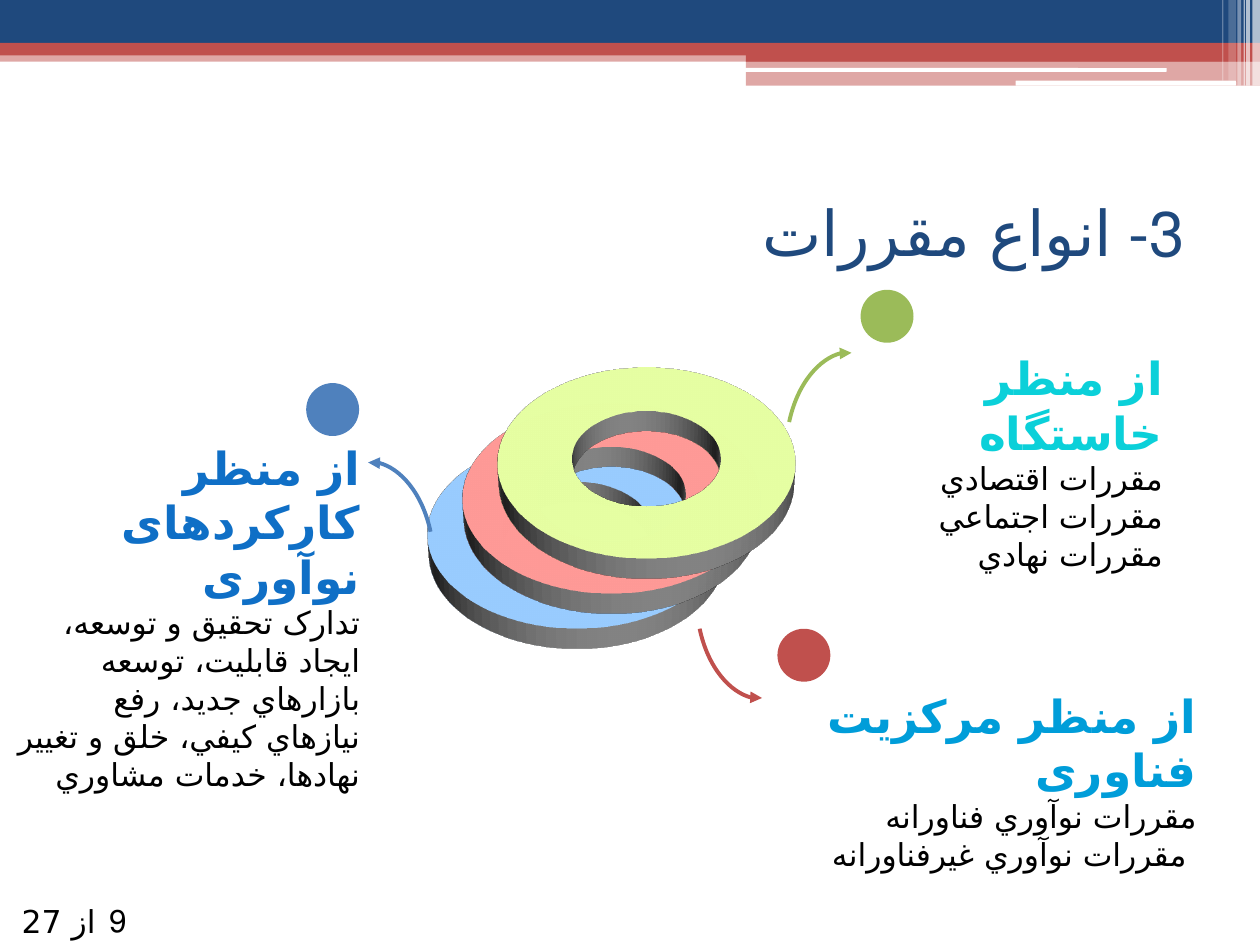
from lxml import etree
from pptx import Presentation
from pptx.dml.color import RGBColor
from pptx.enum.shapes import MSO_CONNECTOR, MSO_SHAPE
from pptx.enum.text import MSO_ANCHOR, MSO_AUTO_SIZE, PP_ALIGN
from pptx.oxml import parse_xml
from pptx.oxml.ns import nsdecls, qn
from pptx.util import Inches, Pt

RECT, ROUND = MSO_SHAPE.RECTANGLE, MSO_SHAPE.ROUNDED_RECTANGLE
DONUT, OVAL = MSO_SHAPE.DONUT, MSO_SHAPE.OVAL
CURVE = MSO_CONNECTOR.CURVE
RIGHT, CENTER = PP_ALIGN.RIGHT, PP_ALIGN.CENTER
TOP, MIDDLE, BOTTOM = MSO_ANCHOR.TOP, MSO_ANCHOR.MIDDLE, MSO_ANCHOR.BOTTOM
GROW = MSO_AUTO_SIZE.SHAPE_TO_FIT_TEXT

WHITE = RGBColor(0xFF, 0xFF, 0xFF)
BLACK = RGBColor(0, 0, 0)
NAVY = RGBColor(0x1F, 0x49, 0x7D)
BLUE = RGBColor(0x4F, 0x81, 0xBD)
RED = RGBColor(0xC0, 0x50, 0x4D)
GREEN = RGBColor(0x9B, 0xBB, 0x59)
TEAL = RGBColor(0x0B, 0xD0, 0xD9)
SKY = RGBColor(0x00, 0x9D, 0xD9)
AZURE = RGBColor(0x0F, 0x6F, 0xC6)

HEAD = {"size": Pt(26), "name": "Calibri", "bold": True}
BODY = {"size": Pt(18), "name": "Cambria", "bold": False}
TITLE = {"size": Pt(36), "name": "Roboto"}
SCRIPT = "DejaVu Sans"  # face for the Persian letters

# Tilted view and depth of the rings
SCENE = (
    f'<a:scene3d {nsdecls("a")}><a:camera prst="perspectiveRelaxed"/>'
    '<a:lightRig rig="threePt" dir="t"/></a:scene3d>'
)
DEPTH = (
    f'<a:sp3d {nsdecls("a")} extrusionH="190500" prstMaterial="plastic">'
    '<a:extrusionClr><a:srgbClr val="FFFFFF"/></a:extrusionClr></a:sp3d>'
)


class Page:
    def __init__(self, slide):
        self.shapes = slide.shapes

    def shape(self, kind, box, color, alpha=100):
        item = self.shapes.add_shape(kind, *map(Inches, box))
        item.shadow.inherit = False
        item.fill.solid()
        item.fill.fore_color.rgb = color
        item.line.fill.background()
        if alpha < 100:
            tint = item.element.spPr.find(".//" + qn("a:srgbClr"))
            etree.SubElement(tint, qn("a:alpha"), val=str(alpha * 1000))
        return item

    def ring(self, left, top, color):
        item = self.shape(DONUT, (left, top, 2.36, 2.36), color)
        item.line.color.rgb = WHITE
        item.line.width = Pt(1.5)
        for xml in (SCENE, DEPTH):
            item.element.spPr.append(parse_xml(xml))

    def arrow(self, left, top, turn, color, flip=False):
        """Curved arrow, mirrored across, then turned by whole degrees."""
        wide, high = 0.64, 0.37
        y1, y2 = (top + high, top) if flip else (top, top + high)
        item = self.shapes.add_connector(
            CURVE, *map(Inches, (left + wide, y1, left, y2)))
        item.line.color.rgb = color
        item.line.width = Pt(2.25)
        props = item.element.spPr
        props.find(qn("a:xfrm")).set("rot", str(turn * 60000))
        props.find(qn("a:prstGeom")).set("prst", "curvedConnector2")
        etree.SubElement(props.find(qn("a:ln")), qn("a:tailEnd"),
                         type="triangle")
        etree.SubElement(props, qn("a:effectLst"))

    def text(self, box, lines, align=RIGHT, anchor=TOP, inset=True):
        """Right-to-left text; each line is (parts, format, colour)."""
        frame = self.shapes.add_textbox(*map(Inches, box)).text_frame
        frame.word_wrap = True
        frame.vertical_anchor = anchor
        if not inset:
            frame.auto_size = GROW
            for side in ("left", "top", "right", "bottom"):
                setattr(frame, f"margin_{side}", 0)
        for i, (parts, form, color) in enumerate(lines):
            para = frame.add_paragraph() if i else frame.paragraphs[0]
            para.alignment = align
            for part in parts:
                self.run(para, part, form, color)
        for props in self.shapes[-1].element.iter(qn("a:pPr")):
            props.set("rtl", "1")

    def run(self, para, words, form, color):
        run = para.add_run()
        run.text = words
        for key, value in form.items():
            setattr(run.font, key, value)
        run.font.color.rgb = color
        # Digits keep the default face
        if not any(c.isdigit() for c in words):
            props = para.runs[-1].font.fill and para.runs[-1]
            latin = list(para.runs[-1].font and self.shapes[-1].element.iter(
                qn("a:latin")))[-1]
            latin.addnext(latin.makeelement(qn("a:cs"), typeface=SCRIPT))

    def block(self, box, head, color, *body):
        lines = [([head], HEAD, color)] + [([b], BODY, BLACK) for b in body]
        self.text(box, lines, inset=False)


def main():
    deck = Presentation()
    deck.slide_width, deck.slide_height = Inches(10), Inches(7.5)
    page = Page(deck.slides.add_slide(deck.slide_layouts[6]))

    # Header bands
    for box, color, alpha in (
        ((0, 0.4, 10, 0.09), RED, 50),
        ((0, 0, 10, 0.34), NAVY, 100),
        ((0, 0.34, 10, 0.1), RED, 100),
        ((5.92, 0.39, 4.08, 0.1), RED, 100),
        ((5.92, 0.48, 4.08, 0.2), RED, 50),
    ):
        page.shape(RECT, box, color, alpha)
    for box in ((5.91, 0.54, 3.35, 0.03), (8.06, 0.64, 1.75, 0.04)):
        page.shape(ROUND, box, WHITE)

    # Pale stripes at the corner
    for left, wide, high, alpha in (
        (9.94, 0.06, 0.68, 65), (9.89, 0.03, 0.68, 65),
        (9.87, 0.01, 0.68, 60), (9.82, 0.03, 0.68, 40),
        (9.75, 0.06, 0.64, 20), (9.7, 0.01, 0.64, 30),
    ):
        page.shape(RECT, (left, 0, wide, high), WHITE, alpha)

    # Stacked rings
    for i, color in enumerate((BLUE, RED, GREEN)):
        page.ring(3.4 + 0.275 * i, 3.01 - 0.28 * i, color)

    # Text blocks
    page.block((6.5, 2.78, 2.73, 1.35), "از منظر خاستگاه", TEAL,
               "مقررات اقتصادي", "مقررات اجتماعي", "مقررات نهادي")
    page.block((6.17, 5.46, 3.33, 1.04), "از منظر مرکزیت فناوری", SKY,
               "مقررات نوآوري فناورانه", " مقررات نوآوري غيرفناورانه")
    page.block((0.13, 3.49, 2.73, 2.09), "از منظر کارکردهای نوآوری", AZURE,
               "تدارک تحقيق و توسعه، ایجاد قابلیت، توسعه بازارهاي جديد، "
               "رفع نيازهاي کيفي، خلق و تغيير نهادها، خدمات مشاوري")

    # Dots and arrows
    for left, top, color in ((2.43, 3.04, BLUE), (6.17, 4.99, RED),
                             (6.83, 2.3, GREEN)):
        page.shape(OVAL, (left, top, 0.42, 0.42), color)
    page.arrow(5.48, 5.08, 258, RED)
    page.arrow(2.85, 3.76, 78, BLUE)
    page.arrow(6.19, 2.89, 102, GREEN, flip=True)

    # Title and page number
    page.text((0.5, 1.25, 9, 1.17),
              [(["3- ", "انواع مقررات"], TITLE, NAVY)], anchor=MIDDLE)
    page.text((-0.26, 7.11, 1.45, 0.5),
              [(["از ", "27"], BODY, BLACK)], CENTER)
    page.text((0.52, 7.1, 0.83, 0.4), [(["9"], BODY, BLACK)], CENTER, BOTTOM)

    deck.save("out.pptx")


if __name__ == "__main__":
    main()
